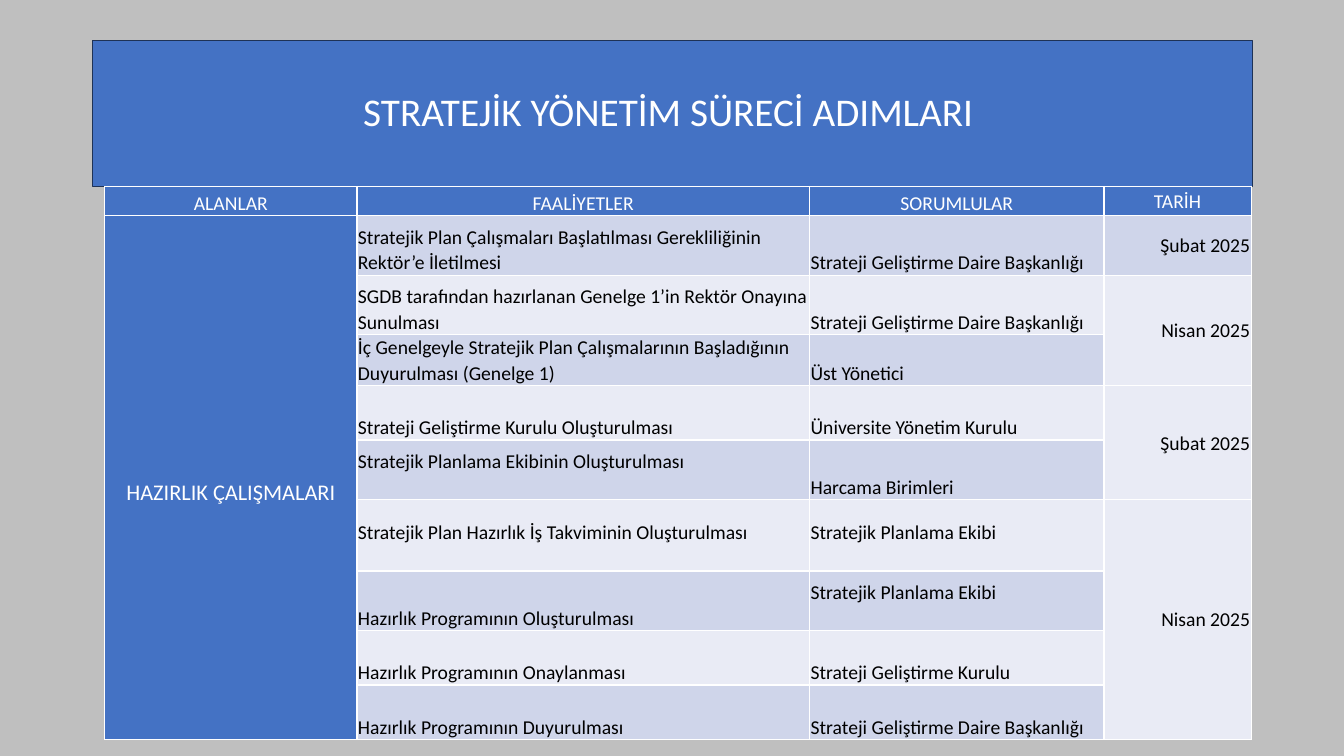
from lxml.etree import SubElement
from pptx import Presentation
from pptx.dml.color import RGBColor
from pptx.enum.text import MSO_ANCHOR as Anchor, PP_ALIGN as Align
from pptx.oxml.ns import qn
from pptx.util import Inches, Pt

# Content
TITLE = "STRATEJİK YÖNETİM SÜRECİ ADIMLARI "
HEADERS = ["ALANLAR", "FAALİYETLER", "SORUMLULAR", "TARİH"]
AREA = "HAZIRLIK ÇALIŞMALARI"
OFFICE = "Strateji Geliştirme Daire Başkanlığı"
TEAM = "Stratejik Planlama Ekibi"
STEPS = [  # activity, responsible
    ("Stratejik Plan Çalışmaları Başlatılması Gerekliliğinin Rektör’e İletilmesi", OFFICE),
    ("SGDB tarafından hazırlanan Genelge 1’in Rektör Onayına Sunulması", OFFICE),
    ("İç Genelgeyle Stratejik Plan Çalışmalarının Başladığının Duyurulması (Genelge 1)",
     "Üst Yönetici"),
    ("Strateji Geliştirme Kurulu Oluşturulması", "Üniversite Yönetim Kurulu"),
    ("Stratejik Planlama Ekibinin Oluşturulması", "Harcama Birimleri"),
    ("Stratejik Plan Hazırlık İş Takviminin Oluşturulması", TEAM),
    ("Hazırlık Programının Oluşturulması", TEAM),
    ("Hazırlık Programının Onaylanması", "Strateji Geliştirme Kurulu"),
    ("Hazırlık Programının Duyurulması", OFFICE),
]
DATES = [("Şubat 2025", 1), ("Nisan 2025", 2), ("Şubat 2025", 2), ("Nisan 2025", 4)]
RAISED = {(5, 1), (6, 1), (6, 2), (7, 2)}  # cells whose text sits one line higher

# Look and grid, in inches
COLORS = {"back": "BFBFBF", "blue": "4472C4", "edge": "1E3256", "white": "FFFFFF",
          "black": "000000", "odd": "CFD5EA", "even": "E9EBF5"}
FONT = "Calibri"
WIDTH, HEIGHT = 13.33, 7.5
COLUMNS = [2.5, 4.49, 2.92, 1.46]
ROWS = [0.29, 0.59, 0.59, 0.5, 0.54, 0.59, 0.71, 0.59, 0.54, 0.54]
TITLE_BOX = (0.92, 0.4, 11.5, 1.45)
TABLE_LEFT, TABLE_TOP = 1.04, 1.85
LINE = 0.26


def color(name):
    return RGBColor.from_string(COLORS[name])


def write(frame, text, size, ink, align, spacing):
    para = frame.paragraphs[0]
    para.alignment, para.line_spacing = align, spacing
    span = para.add_run()
    span.text = text
    span.font.name, span.font.size, span.font.bold = FONT, Pt(size), False
    span.font.color.rgb = color(ink)


def style_cell(cell, fill):
    props = cell._tc.get_or_add_tcPr()
    for side in ("a:lnL", "a:lnR", "a:lnT", "a:lnB"):
        line = SubElement(props, qn(side), w=str(Pt(1)))
        SubElement(SubElement(line, qn("a:solidFill")), qn("a:srgbClr"), val=COLORS["white"])
    cell.fill.solid()
    cell.fill.fore_color.rgb = color(fill)
    cell.margin_left = cell.margin_right = Inches(0.01)
    cell.margin_top = cell.margin_bottom = 0


def fill_cell(cell, text, ink="black", align=Align.LEFT, anchor=Anchor.BOTTOM, size=14):
    cell.vertical_anchor = anchor
    write(cell.text_frame, text, size, ink, align, 1.07)


deck = Presentation()
deck.slide_width, deck.slide_height = Inches(WIDTH), Inches(HEIGHT)
page = deck.slides.add_slide(deck.slide_layouts[5])
page.background.fill.solid()
page.background.fill.fore_color.rgb = color("back")

# Title band
title = page.shapes.title
title.left, title.top, title.width, title.height = map(Inches, TITLE_BOX)
title.fill.solid()
title.fill.fore_color.rgb = color("blue")
title.line.color.rgb = color("edge")
title.line.width = Pt(1)
title.text_frame.vertical_anchor = Anchor.MIDDLE
write(title.text_frame, TITLE, 28, "white", Align.CENTER, 0.9)

# Table grid
table = page.shapes.add_table(
    len(ROWS), len(COLUMNS), Inches(TABLE_LEFT), Inches(TABLE_TOP),
    Inches(sum(COLUMNS)), Inches(sum(ROWS))).table
table.first_row = table.horz_banding = False
for column, width in zip(table.columns, COLUMNS):
    column.width = Inches(width)
for row, height in zip(table.rows, ROWS):
    row.height = Inches(height)
for r in range(len(ROWS)):
    for c in range(len(COLUMNS)):
        band = "odd" if r % 2 else "even"
        style_cell(table.cell(r, c), "blue" if r == 0 or c == 0 else band)

# Headers and area
for c, header in enumerate(HEADERS):
    anchor = Anchor.MIDDLE if c == len(HEADERS) - 1 else Anchor.BOTTOM
    fill_cell(table.cell(0, c), header, "white", Align.CENTER, anchor)
area = table.cell(1, 0)
area.merge(table.cell(len(STEPS), 0))
area.margin_top = Inches(0.29)
fill_cell(area, AREA, "white", Align.CENTER, Anchor.MIDDLE, 16)

# Activities and who is responsible
for r, step in enumerate(STEPS, 1):
    for c, text in enumerate(step, 1):
        cell = table.cell(r, c)
        fill_cell(cell, text)
        if (r, c) in RAISED:
            cell.margin_bottom = Inches(LINE)

# Dates, each over its own number of rows
start = 1
for date, count in DATES:
    cell = table.cell(start, 3)
    if count > 1:
        cell.merge(table.cell(start + count - 1, 3))
    fill_cell(cell, date, align=Align.RIGHT, anchor=Anchor.MIDDLE)
    start += count

deck.save("out.pptx")
